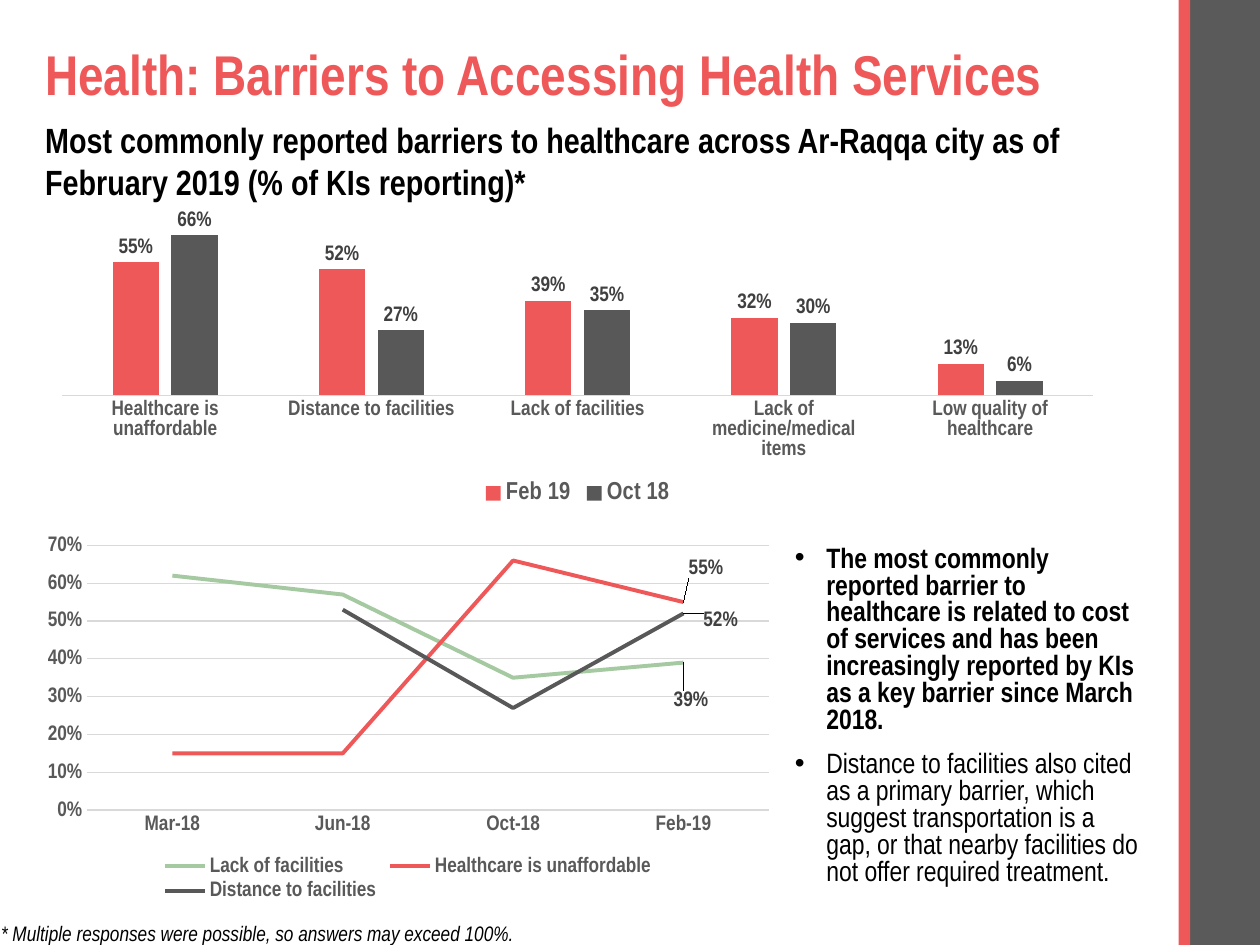
from dataclasses import dataclass

from pptx import Presentation, util as u
from pptx.chart.data import CategoryChartData
from pptx.dml.color import RGBColor
from pptx.enum import chart as charts, shapes, text
from pptx.oxml import parse_xml
from pptx.oxml.ns import nsdecls, qn


@dataclass(frozen=True)
class Theme:
    face: str = "Arial Narrow"
    red: str = "EE5859"
    gray: str = "585859"
    stripe: str = "5A5A5A"
    green: str = "A5C9A1"
    black: str = "000000"
    axis_text: str = "595959"
    label_text: str = "404040"
    rule: str = "D9D9D9"
    title: int = 32
    subtitle: int = 20
    body: int = 16
    legend: int = 14
    small: int = 12


THEME = Theme()
COLUMNS, ROWS = 100, 75
CELL = u.Inches(0.1)


def grid(*cells):
    return [u.Emu(round(cell * CELL)) for cell in cells]


def color(value):
    return RGBColor.from_string(value)


def style_font(font, size, ink, bold=True, italic=False):
    font.name = THEME.face
    font.size = u.Pt(size)
    font.bold = bold
    font.italic = italic
    font.color.rgb = color(ink)


def set_title(slide, wording, box):
    title = slide.shapes.title
    title.left, title.top, title.width, title.height = grid(*box)
    frame = title.text_frame
    frame.text = wording
    frame.word_wrap = True
    frame.auto_size = text.MSO_AUTO_SIZE.NONE
    frame.vertical_anchor = text.MSO_ANCHOR.MIDDLE
    paragraph = frame.paragraphs[0]
    paragraph.alignment = text.PP_ALIGN.LEFT
    paragraph.line_spacing = 0.9
    style_font(paragraph.runs[0].font, THEME.title, THEME.red)


def add_text(slide, wording, box, size, bold=True, italic=False):
    frame = slide.shapes.add_textbox(*grid(*box)).text_frame
    frame.word_wrap = True
    frame.text = wording
    style_font(frame.paragraphs[0].runs[0].font, size, THEME.black, bold, italic)


def add_bullets(slide, items, box):
    frame = slide.shapes.add_textbox(*grid(*box)).text_frame
    frame.word_wrap = True
    for index, (wording, bold) in enumerate(items):
        paragraph = frame.add_paragraph() if index else frame.paragraphs[0]
        paragraph.text = wording
        paragraph.line_spacing = 0.8
        if index:
            paragraph.space_before = u.Pt(10)
        properties = paragraph._p.get_or_add_pPr()
        properties.set("marL", str(u.Inches(0.25)))
        properties.set("indent", str(-u.Inches(0.25)))
        properties.append(parse_xml(f'<a:buFont {nsdecls("a")} typeface="Arial"/>'))
        properties.append(parse_xml(f'<a:buChar {nsdecls("a")} char="•"/>'))
        style_font(paragraph.runs[0].font, THEME.body, THEME.black, bold)


def add_stripe(slide, left, width, fill):
    shape = slide.shapes.add_shape(
        shapes.MSO_SHAPE.RECTANGLE, *grid(left, 0, width, ROWS))
    shape.shadow.inherit = False
    shape.fill.solid()
    shape.fill.fore_color.rgb = color(fill)
    shape.line.fill.background()


def layout(**shares):
    values = "".join(f'<c:{key} val="{share}"/>' for key, share in shares.items())
    target = ""
    if "w" in shares:
        target = ('<c:layoutTarget val="inner"/>'
                  '<c:xMode val="edge"/><c:yMode val="edge"/>')
    return parse_xml(f'<c:layout {nsdecls("c")}><c:manualLayout>{target}{values}'
                     '</c:manualLayout></c:layout>')


def add_chart(slide, kind, box, categories, rows, legend_size):
    data = CategoryChartData(number_format="0%")
    data.categories = categories
    for name, values, _ in rows:
        data.add_series(name, values)
    chart = slide.shapes.add_chart(kind, *grid(*box), data).chart
    chart.has_title = False
    style_font(chart.font, 10, THEME.black, False)
    chart.has_legend = True
    chart.legend.position = charts.XL_LEGEND_POSITION.BOTTOM
    chart.legend.include_in_layout = False
    style_font(chart.legend.font, legend_size, THEME.axis_text)
    chart.plots[0].vary_by_categories = False
    for axis in (chart.category_axis, chart.value_axis):
        axis.major_tick_mark = axis.minor_tick_mark = charts.XL_TICK_MARK.NONE
        style_font(axis.tick_labels.font, THEME.small, THEME.axis_text)
    line = chart.category_axis.format.line
    line.color.rgb = color(THEME.rule)
    line.width = u.Pt(0.75)
    chart.value_axis.minimum_scale = 0
    chart.value_axis.maximum_scale = 0.7
    return chart


def add_column_chart(slide, box, categories, rows):
    chart = add_chart(slide, charts.XL_CHART_TYPE.COLUMN_CLUSTERED, box,
                      categories, rows, THEME.legend)
    chart.value_axis.visible = False
    chart.value_axis.has_major_gridlines = False
    plot = chart.plots[0]
    plot.gap_width, plot.overlap = 125, -25
    plot.gap_width, plot.overlap = 219, -27
    for series, (_, _, fill) in zip(plot.series, rows):
        series.format.fill.solid()
        series.format.fill.fore_color.rgb = color(fill)
        labels = series.data_labels
        labels.show_value = True
        labels.number_format = "0%"
        labels.number_format_is_linked = False
        labels.position = charts.XL_LABEL_POSITION.OUTSIDE_END
        style_font(labels.font, THEME.small, THEME.label_text)
    area = chart._chartSpace.chart.plotArea
    for element in area.findall(qn("c:layout")):
        area.remove(element)
    area.insert(0, layout(x=0.018, y=0.067, w=0.964, h=0.556))


def add_line_chart(slide, box, categories, rows, end_labels):
    chart = add_chart(slide, charts.XL_CHART_TYPE.LINE, box,
                      categories, rows, THEME.small)
    axis = chart.value_axis
    axis.major_unit = 0.1
    axis.tick_labels.number_format = "0%"
    axis.tick_labels.number_format_is_linked = False
    axis.format.line.fill.background()
    axis.has_major_gridlines = True
    axis.major_gridlines.format.line.color.rgb = color(THEME.rule)
    axis.major_gridlines.format.line.width = u.Pt(0.75)
    for series, row, (position, x, y) in zip(chart.plots[0].series, rows, end_labels):
        series.smooth = False
        series.marker.style = charts.XL_MARKER_STYLE.NONE
        series.format.line.color.rgb = color(row[2])
        series.format.line.width = u.Pt(2.25)
        series.data_labels.show_value = False
        label = series.points[len(categories) - 1].data_label
        style_font(label.font, THEME.small, THEME.label_text)
        label.position = position
        series._element.xpath("c:dLbls/c:dLbl")[0].insert(1, layout(x=x, y=y))


def main():
    presentation = Presentation()
    presentation.slide_width, presentation.slide_height = grid(COLUMNS, ROWS)
    slide = presentation.slides.add_slide(presentation.slide_layouts[5])
    add_stripe(slide, 94.3, 5.7, THEME.stripe)
    add_stripe(slide, 93.55, 0.9, THEME.red)
    set_title(slide, "Health: Barriers to Accessing Health Services",
              (2.6, 2.4, 86.9, 7.4))
    add_text(slide, "Most commonly reported barriers to healthcare across Ar-Raqqa "
             "city as of February 2019 (% of KIs reporting)*",
             (2.6, 8.9, 89.4, 7.7), THEME.subtitle)
    add_bullets(slide, [
        ("The most commonly reported barrier to healthcare is related to cost of "
         "services and has been increasingly reported by KIs as a key barrier "
         "since March 2018.", True),
        ("Distance to facilities also cited as a primary barrier, which suggest "
         "transportation is a gap, or that nearby facilities do not offer "
         "required treatment.", False),
    ], (62.1, 42.9, 29.8, 30.3))
    add_text(slide, "* Multiple responses were possible, so answers may exceed 100%.",
             (-0.9, 72.6, 86.9, 3), THEME.small, False, True)
    add_column_chart(slide, (3.4, 16.3, 84.9, 24.2), [
        "Healthcare is unaffordable", "Distance to facilities", "Lack of facilities",
        "Lack of medicine/medical items", "Low quality of healthcare"], [
        ("Feb 19", (0.55, 0.52, 0.39, 0.32, 0.13), THEME.red),
        ("Oct 18", (0.66, 0.27, 0.35, 0.3, 0.06), THEME.gray)])
    place = charts.XL_LABEL_POSITION
    add_line_chart(slide, (2.6, 41.9, 59.6, 30), [
        "Mar-18", "Jun-18", "Oct-18", "Feb-19"], [
        ("Lack of facilities", (0.62, 0.57, 0.35, 0.39), THEME.green),
        ("Healthcare is unaffordable", (0.15, 0.15, 0.66, 0.55), THEME.red),
        ("Distance to facilities", (None, 0.53, 0.27, 0.52), THEME.gray)], [
        (place.BELOW, 0.01, 0.06), (place.ABOVE, 0.03, -0.05),
        (place.RIGHT, 0.02, 0.02)])
    presentation.save("out.pptx")


if __name__ == "__main__":
    main()
